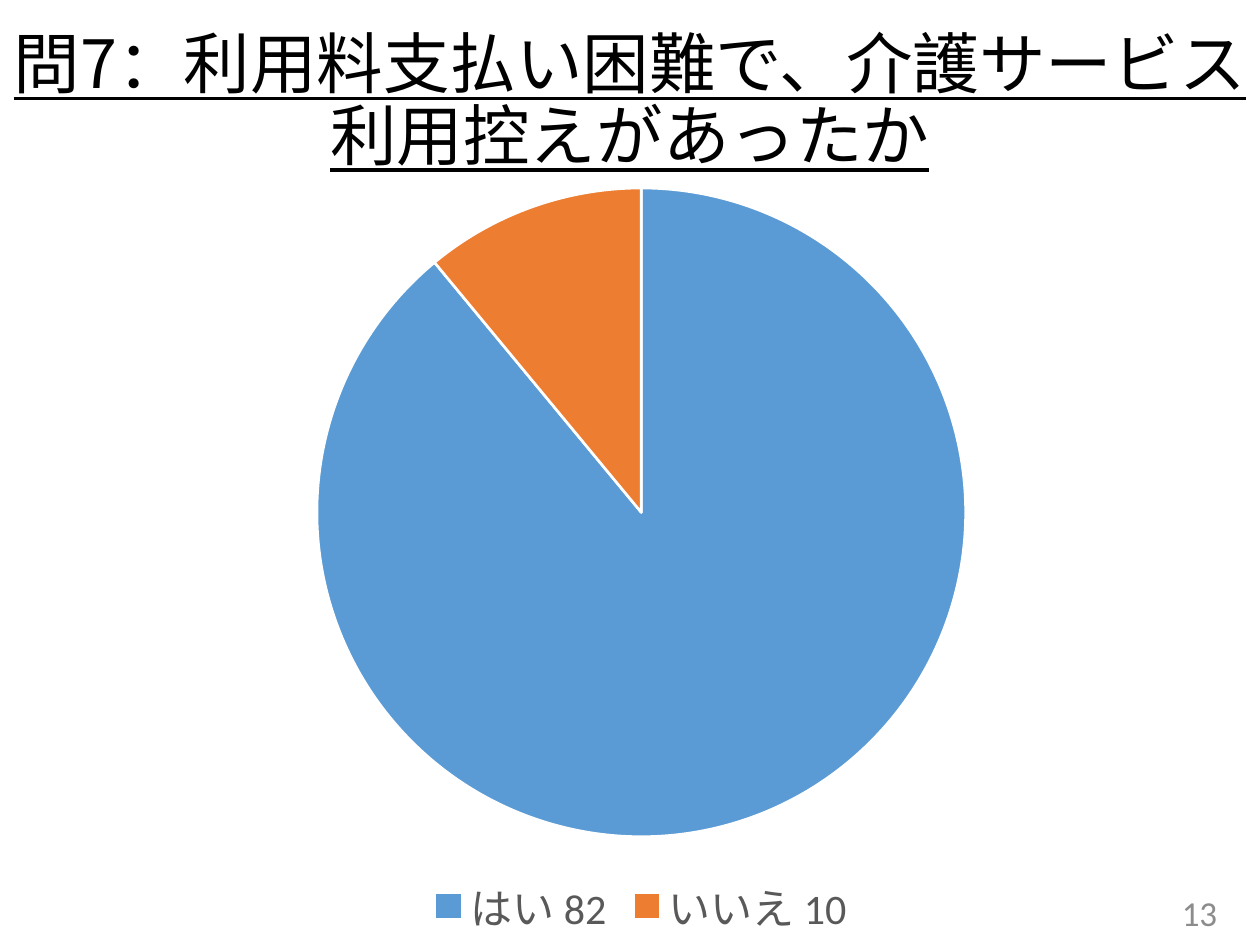
from pptx import Presentation
from pptx.chart.data import CategoryChartData
from pptx.dml.color import RGBColor
from pptx.enum.chart import XL_CHART_TYPE, XL_LEGEND_POSITION
from pptx.enum.text import MSO_ANCHOR, MSO_AUTO_SIZE, PP_ALIGN
from pptx.oxml import parse_xml
from pptx.oxml.ns import nsdecls, qn
from pptx.util import Inches, Pt


def color(value):
    return RGBColor.from_string(value)


class SurveySlide:
    latin_font = "Calibri"
    japanese_font = "Noto Sans CJK JP"
    slice_colors = ("5B9BD5", "ED7D31")

    def __init__(self, deck):
        self.slide = deck.slides.add_slide(deck.slide_layouts[5])

    def place(self, shape, left, top, width, height):
        shape.left, shape.top = Inches(left), Inches(top)
        shape.width, shape.height = Inches(width), Inches(height)

    def style_font(self, font, name, size, value):
        font.name = name
        font.size = Pt(size)
        font.color.rgb = color(value)

    def set_text(self, shape, text, name, size, value, align):
        frame = shape.text_frame
        frame.text = text
        frame.word_wrap = True
        frame.auto_size = MSO_AUTO_SIZE.NONE
        frame.vertical_anchor = MSO_ANCHOR.MIDDLE
        para = frame.paragraphs[0]
        para.alignment = align
        span = para.runs[0]
        self.style_font(span.font, name, size, value)
        return para, span

    def title(self, text, *area):
        title = self.slide.shapes.title
        self.place(title, *area)
        para, span = self.set_text(title, text, self.japanese_font, 38, "000000", PP_ALIGN.CENTER)
        para.line_spacing = 0.9
        span.font.underline = True
        east_asian = parse_xml(f'<a:ea {nsdecls("a")} typeface="{self.japanese_font}"/>')
        span.font._element.find(qn("a:latin")).addnext(east_asian)

    def page_number(self, text, *area):
        box = self.slide.shapes.add_textbox(*map(Inches, area))
        self.set_text(box, text, self.latin_font, 20, "8C8C8C", PP_ALIGN.RIGHT)

    def pie(self, categories, values, *area):
        data = CategoryChartData()
        data.categories = categories
        data.add_series("Series 1", values)
        chart = self.slide.shapes.add_chart(XL_CHART_TYPE.PIE, *map(Inches, area), data).chart
        self.style_font(chart.font, self.latin_font, 10, "000000")
        chart.has_title = False
        chart.has_legend = True
        chart.legend.position = XL_LEGEND_POSITION.BOTTOM
        chart.legend.include_in_layout = False
        self.style_font(chart.legend.font, self.latin_font, 24, "595959")
        plot = chart.plots[0]
        plot.vary_by_categories = True
        for index, value in enumerate(self.slice_colors):
            style = plot.series[0].points[index].format
            style.fill.solid()
            style.fill.fore_color.rgb = color(value)
            style.line.color.rgb = color("FFFFFF")
            style.line.width = Pt(1.5)
        self.fix_plot_area(chart, x=0.24, y=0.02, w=0.52, h=0.84)

    def fix_plot_area(self, chart, **position):
        plot_area = chart._chartSpace.chart.plotArea
        for layout in plot_area.findall(qn("c:layout")):
            plot_area.remove(layout)
        sizes = "".join(f'<c:{key} val="{value}"/>' for key, value in position.items())
        plot_area.insert(0, parse_xml(
            f'<c:layout {nsdecls("c")}><c:manualLayout><c:layoutTarget val="inner"/>'
            f'<c:xMode val="edge"/><c:yMode val="edge"/>{sizes}</c:manualLayout></c:layout>'))


def main():
    deck = Presentation()
    deck.slide_width, deck.slide_height = Inches(10), Inches(7.5)
    page = SurveySlide(deck)
    page.title("問7：利用料支払い困難で、介護サービス利用控えがあったか", 0, 0.14, 10, 1.35)
    page.pie(("はい 82", "いいえ 10"), (89, 11), 0.09, 1.37, 10, 6.13)
    page.page_number("13", 7.51, 7.04, 2.25, 0.4)
    deck.save("out.pptx")


if __name__ == "__main__":
    main()
